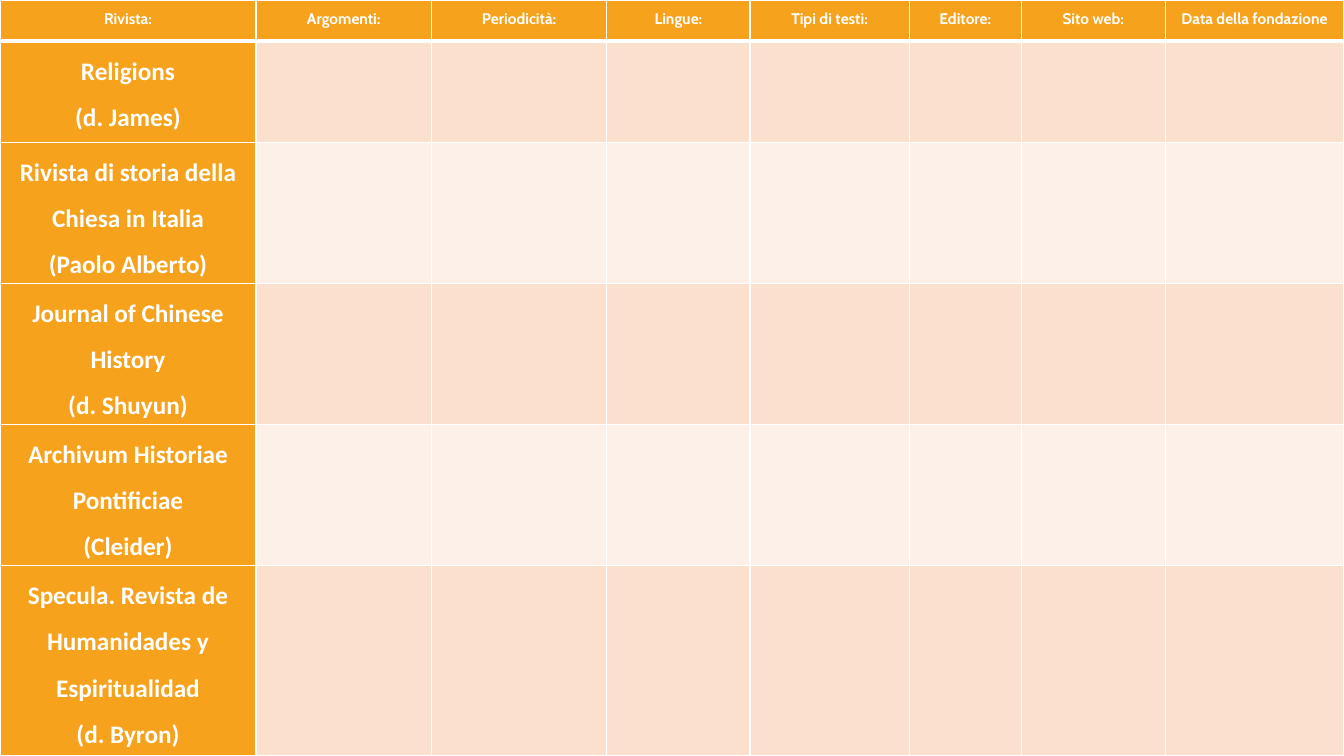
import pptx
import pptx.dml.color
import pptx.enum.text
import pptx.oxml
import pptx.oxml.ns
import pptx.util

RGBColor = pptx.dml.color.RGBColor
ORANGE = RGBColor(0xF6, 0xA2, 0x1D)
PEACH = RGBColor(0xFB, 0xE0, 0xCD)
CREAM = RGBColor(0xFD, 0xF0, 0xE8)
WHITE = RGBColor(0xFF, 0xFF, 0xFF)
PALE_GREY = RGBColor(0xF2, 0xF2, 0xF2)

SLIDE_WIDTH, SLIDE_HEIGHT = 13.33, 7.5
COLUMN_WIDTHS = [2.54, 1.74, 1.74, 1.42, 1.58, 1.11, 1.43, 1.77]
ROW_HEIGHTS = [0.41, 1, 1.4, 1.4, 1.4, 1.89]

HEADINGS = ["Rivista:", "Argomenti:", "Periodicità:", "Lingue:",
            "Tipi di testi:", "Editore:", "Sito web:", "Data della fondazione"]
JOURNALS = [
    ("Religions", "(d. James)"),
    ("Rivista di storia della Chiesa in Italia", "(Paolo Alberto)"),
    ("Journal of Chinese History", "(d. Shuyun)"),
    ("Archivum Historiae Pontificiae", "(Cleider)"),
    ("Specula. Revista de Humanidades y Espiritualidad", "(d. Byron)"),
]

HEADING_FONT = {"name": "Cabin", "size": pptx.util.Pt(11), "bold": True}
JOURNAL_FONT = {"name": "Calibri", "size": pptx.util.Pt(18), "bold": True}
CELL_FORMAT = {
    "margin_left": pptx.util.Inches(0.06),
    "margin_right": pptx.util.Inches(0.06),
    "margin_top": 0,
    "margin_bottom": 0,
    "vertical_anchor": pptx.enum.text.MSO_ANCHOR.TOP,
}
PARAGRAPH_FORMAT = {
    "alignment": pptx.enum.text.PP_ALIGN.CENTER,
    "line_spacing": 1.5,
}


def set_attributes(target, values):
    for name, value in values.items():
        setattr(target, name, value)


def add_borders(cell, top=1, bottom=1):
    """Draw white cell borders, with widths in points."""
    properties = cell._tc.get_or_add_tcPr()
    for side, width in (("L", 1), ("R", 1), ("T", top), ("B", bottom)):
        properties.append(pptx.oxml.parse_xml(
            f'<a:ln{side} {pptx.oxml.ns.nsdecls("a")} w="{pptx.util.Pt(width)}">'
            f'<a:solidFill><a:srgbClr val="{WHITE}"/></a:solidFill>'
            f'</a:ln{side}>'))


def fill_cell(cell, color):
    cell.fill.solid()
    cell.fill.fore_color.rgb = color


def write_cell(cell, lines, font_format):
    """Write one centred white paragraph for each line."""
    frame = cell.text_frame
    for index, line in enumerate(lines):
        para = frame.add_paragraph() if index else frame.paragraphs[0]
        set_attributes(para, PARAGRAPH_FORMAT)
        span = para.add_run()
        span.text = line
        set_attributes(span.font, font_format)
        span.font.color.rgb = WHITE


def add_grid(page):
    """Add the full-page table with its column widths and row heights."""
    grid = page.shapes.add_table(
        len(ROW_HEIGHTS), len(COLUMN_WIDTHS), 0, 0,
        pptx.util.Inches(SLIDE_WIDTH), pptx.util.Inches(SLIDE_HEIGHT)).table
    for column, width in zip(grid.columns, COLUMN_WIDTHS):
        column.width = pptx.util.Inches(width)
    for row, height in zip(grid.rows, ROW_HEIGHTS):
        row.height = pptx.util.Inches(height)
    return grid


def style_grid(grid):
    """Orange header row and first column, alternating bands elsewhere."""
    grid.first_col = True
    for row_index, row in enumerate(grid.rows):
        band = PEACH if row_index % 2 else CREAM
        for column_index, cell in enumerate(row.cells):
            set_attributes(cell, CELL_FORMAT)
            add_borders(cell, top=3 if row_index == 1 else 1,
                        bottom=3 if row_index == 0 else 1)
            is_heading = row_index == 0 or column_index == 0
            fill_cell(cell, ORANGE if is_heading else band)


def main():
    deck = pptx.Presentation()
    deck.slide_width = pptx.util.Inches(SLIDE_WIDTH)
    deck.slide_height = pptx.util.Inches(SLIDE_HEIGHT)
    page = deck.slides.add_slide(deck.slide_layouts[6])
    page.background.fill.solid()
    page.background.fill.fore_color.rgb = PALE_GREY

    # Table of journals
    grid = add_grid(page)
    style_grid(grid)

    # Column headings
    for column_index, heading in enumerate(HEADINGS):
        write_cell(grid.cell(0, column_index), [heading], HEADING_FONT)

    # Journal titles with the person in charge
    for row_index, journal in enumerate(JOURNALS, start=1):
        write_cell(grid.cell(row_index, 0), journal, JOURNAL_FONT)

    deck.save("out.pptx")


if __name__ == "__main__":
    main()
